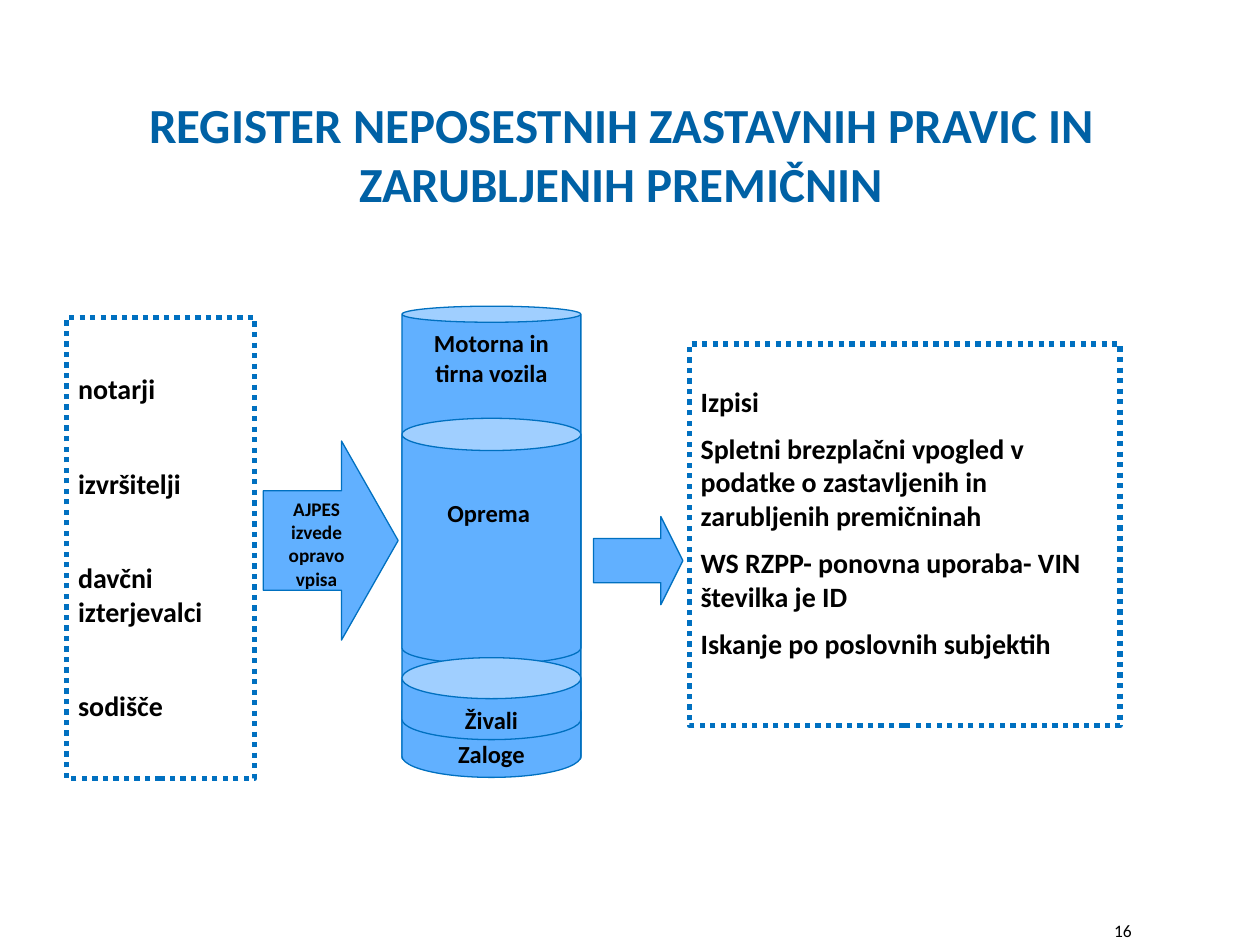
from dataclasses import dataclass

from pptx import Presentation
from pptx.dml.color import RGBColor
from pptx.enum.dml import MSO_LINE
from pptx.enum.shapes import MSO_SHAPE
from pptx.enum.text import MSO_ANCHOR, PP_ALIGN
from pptx.util import Inches, Pt

FILL = "61B0FF"
LINE = "0070C0"
BLACK = "000000"
TITLE = "0061A5"


@dataclass
class Label:
    lines: list[str]
    size: int
    align: PP_ALIGN = PP_ALIGN.CENTER
    color: str = BLACK
    bold: bool = True
    gap: float = 0
    inset: float = 0.05
    side: float = 0.1
    anchor: MSO_ANCHOR = MSO_ANCHOR.TOP


@dataclass
class Block:
    kind: MSO_SHAPE
    left: float
    top: float
    width: float
    height: float
    adj: tuple[float, ...] = ()
    label: Label | None = None


def rgb(value: str) -> RGBColor:
    return RGBColor.from_string(value)


def write(sp, label: Label) -> None:
    tf = sp.text_frame
    frame = {
        "word_wrap": True,
        "vertical_anchor": label.anchor,
        "margin_left": Inches(label.side),
        "margin_right": Inches(label.side),
        "margin_top": Inches(label.inset),
        "margin_bottom": Inches(0.05),
    }
    for name, value in frame.items():
        setattr(tf, name, value)
    font = {"name": "Calibri", "size": Pt(label.size), "bold": label.bold}
    for i, line in enumerate(label.lines):
        p = tf.add_paragraph() if i else tf.paragraphs[0]
        p.alignment = label.align
        if i:
            p.space_before = Pt(label.gap)
        r = p.add_run()
        r.text = line
        for name, value in font.items():
            setattr(r.font, name, value)
        r.font.color.rgb = rgb(label.color)


def draw_text(s, left: float, top: float, width: float, height: float, label: Label) -> None:
    sp = s.shapes.add_textbox(Inches(left), Inches(top), Inches(width), Inches(height))
    write(sp, label)


def draw_block(s, block: Block) -> None:
    box = (block.left, block.top, block.width, block.height)
    sp = s.shapes.add_shape(block.kind, *map(Inches, box))
    sp.shadow.inherit = False
    for i, value in enumerate(block.adj):
        sp.adjustments[i] = value
    sp.line.color.rgb = rgb(LINE)
    if block.kind == MSO_SHAPE.RECTANGLE:
        sp.fill.background()
        sp.line.width = Pt(3)
        sp.line.dash_style = MSO_LINE.ROUND_DOT
    else:
        sp.fill.solid()
        sp.fill.fore_color.rgb = rgb(FILL)
        sp.line.width = Pt(0.75)
    if block.label:
        write(sp, block.label)


def can(top: float, height: float, adj: float, text: str, inset: float = 0.05) -> Block:
    return Block(MSO_SHAPE.CAN, 3.19, top, 1.42, height, (adj,), Label([text], 14, inset=inset))


def panel(left: float, top: float, width: float, height: float,
          lines: list[str], gap: float, inset: float) -> Block:
    label = Label(lines, 16, PP_ALIGN.LEFT, gap=gap, inset=inset, side=0.09)
    return Block(MSO_SHAPE.RECTANGLE, left, top, width, height, label=label)


SOURCES = ["notarji", "izvršitelji", "davčni izterjevalci", "sodišče"]
OUTPUTS = [
    "Izpisi",
    "Spletni brezplačni vpogled v podatke o zastavljenih in zarubljenih premičninah",
    "WS RZPP- ponovna uporaba- VIN številka je ID",
    "Iskanje po poslovnih subjektih",
]
ENTRY = Label(["AJPES izvede opravo vpisa"], 11, inset=0.1, anchor=MSO_ANCHOR.MIDDLE)

BLOCKS = [
    Block(MSO_SHAPE.RIGHT_ARROW, 2.09, 3.5, 1.07, 1.58, (0.5, 0.42), ENTRY),
    panel(0.53, 2.52, 1.49, 3.66, SOURCES, 34.8, 0.43),
    Block(MSO_SHAPE.RIGHT_ARROW, 4.71, 4.1, 0.71, 0.7, (0.5, 0.25)),
    panel(5.47, 2.73, 3.42, 3.03, OUTPUTS, 7.7, 0.32),
    can(2.43, 3.65, 0.09, "Motorna in tirna vozila"),
    can(3.32, 1.95, 0.18, "Oprema ", 0.38),
    can(5.48, 0.69, 0.49, "Zaloge"),
    can(5.22, 0.65, 0.5, "Živali"),
]


def main() -> None:
    prs = Presentation()
    prs.slide_width = Inches(10)
    prs.slide_height = Inches(7.5)
    s = prs.slides.add_slide(prs.slide_layouts[6])
    draw_text(s, 7.58, 7.25, 1.5, 0.25, Label(["16"], 10, PP_ALIGN.RIGHT, bold=False))
    for block in BLOCKS:
        draw_block(s, block)
    title = "REGISTER NEPOSESTNIH ZASTAVNIH PRAVIC IN ZARUBLJENIH PREMIČNIN"
    draw_text(s, 0.68, 0.7, 8.5, 0.68, Label([title], 28, color=TITLE))
    prs.save("out.pptx")


if __name__ == "__main__":
    main()
